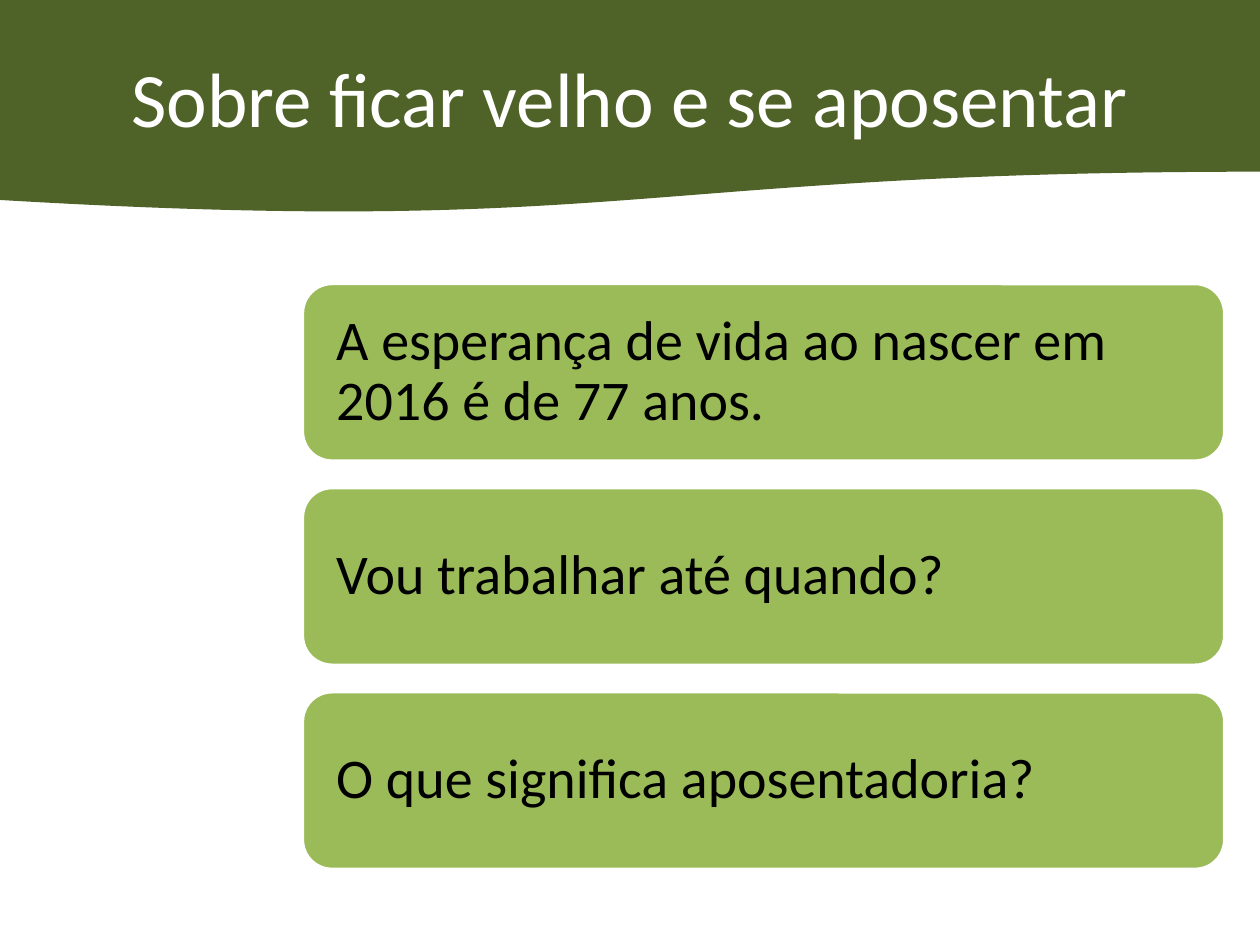
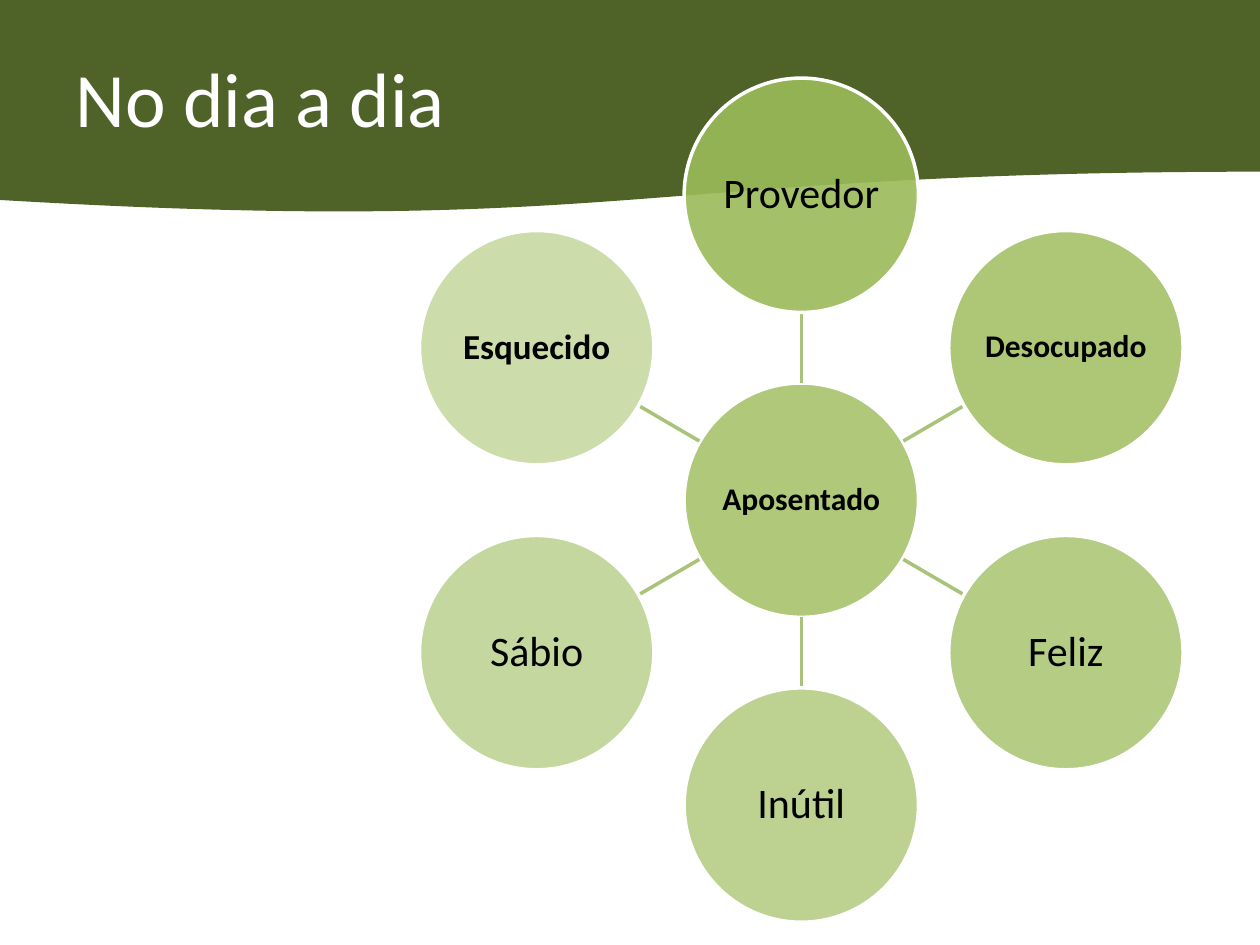
from math import cos, radians, sin

from lxml.etree import SubElement
from pptx import Presentation
from pptx.dml.color import RGBColor as Rgb
from pptx.enum.shapes import MSO_CONNECTOR as Link, MSO_SHAPE as Form
from pptx.enum.text import MSO_ANCHOR as Anchor, MSO_AUTO_SIZE as Fit, PP_ALIGN as Align
from pptx.oxml.ns import qn
from pptx.util import Pt

PX = 9144  # 100 px to the inch
HUES = {"band": "4F6228", "leaf": "9BBB59", "spoke": "A9C379",
        "white": "FFFFFF", "black": "000000"}


def hue(name):
    return Rgb.from_string(HUES[name])


class Deck:
    """Holds the shared style and the current slide."""

    def __init__(self):
        self.prs = Presentation()
        self.prs.slide_width, self.prs.slide_height = 1000 * PX, 750 * PX
        self.layout = self.prs.slide_layouts[5]
        self.slide = None

    def start(self, title, align):
        first = self.slide is None
        self.slide = self.prs.slides.add_slide(self.layout)
        if first:
            self.band()
        box = self.slide.shapes.title
        place = {"left": 50, "top": 14, "width": 900, "height": 125}
        for key, val in place.items():
            setattr(box, key, val * PX)
        self.label(box, title, 44, align, "white")

    def band(self):
        """Puts the wavy band on the layout, behind the title."""
        band = self.shape(Form.FLOWCHART_DOCUMENT, (0, 0, 1000, 170), "band").element
        band.nvSpPr.cNvPr.set("id", "20")
        self.layout.shapes.element.insert(2, band)

    def shape(self, form, area, fill, edge=None, alpha=None):
        item = self.slide.shapes.add_shape(form, *(n * PX for n in area))
        item.shadow.inherit = False
        item.fill.solid()
        item.fill.fore_color.rgb = hue(fill)
        if alpha:
            tint = item.element.spPr.find(qn("a:solidFill"))[0]
            SubElement(tint, qn("a:alpha")).set("val", str(alpha * 1000))
        if edge:
            item.line.color.rgb = hue(edge)
            item.line.width = Pt(2)
        else:
            item.line.fill.background()
        return item

    def label(self, item, text, size, align=Align.LEFT, tone="black",
              bold=False, inset=10, space=1.0):
        frame = item.text_frame
        frame.text = text
        look = {"word_wrap": True, "auto_size": Fit.NONE,
                "vertical_anchor": Anchor.MIDDLE}
        sides = ("left", "top", "right", "bottom")
        look.update({f"margin_{side}": inset * PX for side in sides})
        for key, val in look.items():
            setattr(frame, key, val)
        para = frame.paragraphs[0]
        para.alignment, para.line_spacing = align, space
        font = para.runs[0].font
        for key, val in {"name": "Calibri", "size": Pt(size), "bold": bold}.items():
            setattr(font, key, val)
        font.color.rgb = hue(tone)

    def card(self, text, area):
        item = self.shape(Form.ROUNDED_RECTANGLE, area, "leaf", "white")
        self.label(item, text, 32, inset=20, space=0.9)

    def disc(self, text, mid, rad, size, alpha):
        area = (mid[0] - rad, mid[1] - rad, 2 * rad, 2 * rad)
        item = self.shape(Form.OVAL, area, "leaf", "white", alpha)
        self.label(item, text, size, Align.CENTER, bold=size < 24, inset=1, space=0.9)

    def spoke(self, tail, head):
        ends = (n * PX for n in tail + head)
        line = self.slide.shapes.add_connector(Link.STRAIGHT, *ends)
        line.line.color.rgb = hue("spoke")
        line.line.width = Pt(2)
        SubElement(line.element.spPr, qn("a:effectLst"))


def main():
    deck = Deck()

    # Slide 1: stacked cards
    deck.start("Sobre ficar velho e se aposentar", Align.CENTER)
    cards = ("A esperança de vida ao nascer em 2016 é de 77 anos.",
             "Vou trabalhar até quando?",
             "O que significa aposentadoria?")
    for row, text in enumerate(cards):
        deck.card(text, (240, 225 + 162 * row, 732, 141))

    # Slide 2: hub and ring of roles, clockwise from the top
    deck.start("No dia a dia", Align.LEFT)
    hub, rad, ring = (636, 397), 93, 242

    def polar(dist, turn):
        return (round(hub[0] + dist * sin(turn)), round(hub[1] - dist * cos(turn)))

    deck.disc("Aposentado", hub, rad, 18, 80)
    roles = (("Provedor", 24), ("Desocupado", 18), ("Feliz", 24),
             ("Inútil", 24), ("Sábio", 24), ("Esquecido", 20))
    for step, (text, size) in enumerate(roles):
        turn = radians(360 / len(roles) * step)
        deck.spoke(polar(rad, turn), polar(ring - rad, turn))
        deck.disc(text, polar(ring, turn), rad, size, 90 - 8 * step)

    deck.prs.save("out.pptx")


if __name__ == "__main__":
    main()
